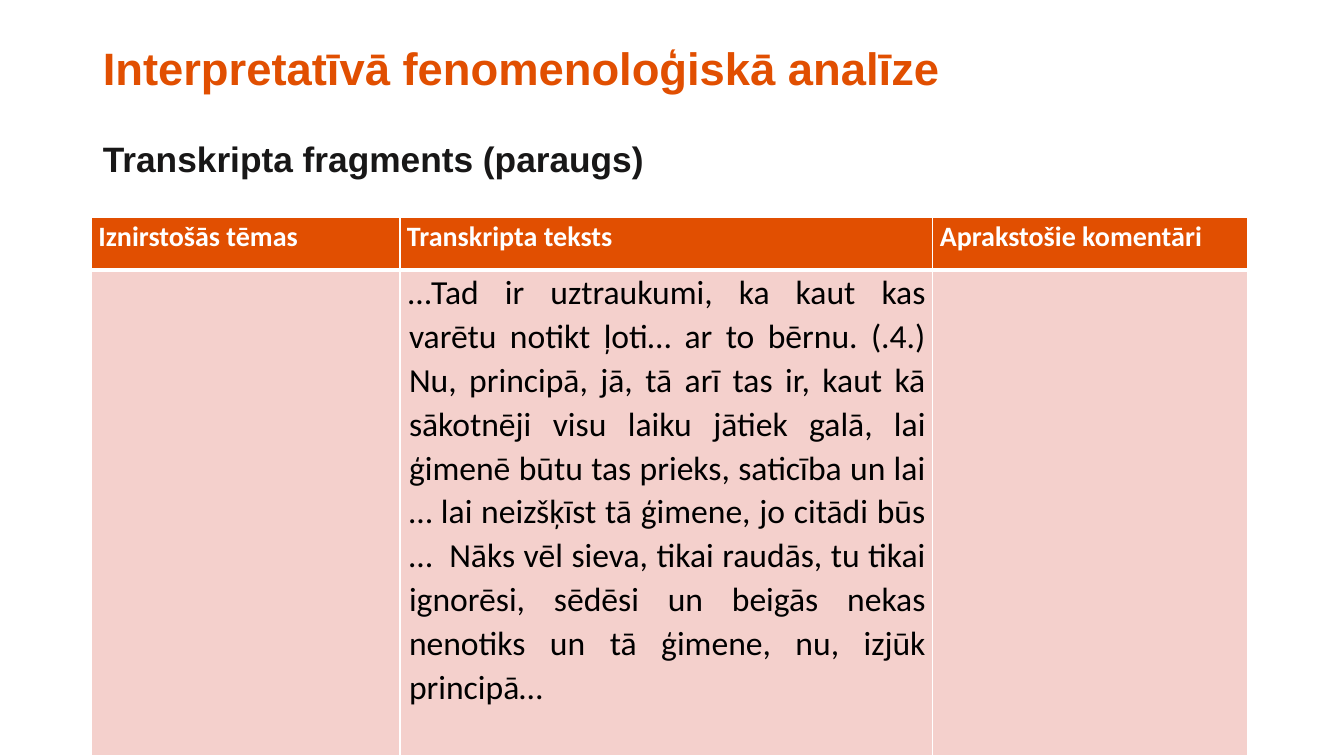
from lxml import etree
from pptx import Presentation, util as u
from pptx.dml.color import RGBColor
from pptx.enum import text
from pptx.oxml import ns

ORANGE = RGBColor(0xE1, 0x4F, 0x01)
PINK = RGBColor(0xF4, 0xD0, 0xCC)
DARK = RGBColor(0x18, 0x17, 0x17)
BLACK = RGBColor(0, 0, 0)
WHITE = RGBColor(0xFF, 0xFF, 0xFF)

WIDTH, HEIGHT = u.Inches(13.33), u.Inches(7.5)
TITLE_BOX = (0.069, 0.053, 0.863, 0.193)  # shares of the slide's size
TABLE_BOX = (0.068, 0.288, 0.86, 0.712)
COLUMN_SHARES = (0.267, 0.461, 0.272)
ROW_SHARES = (0.097, 0.903)

TITLE_LINES = (
    ("Interpretatīvā fenomenoloģiskā analīze", 32.4, ORANGE, 0),
    ("Transkripta fragments (paraugs)", 25.2, DARK, 33.5),
)
HEADERS = ("Iznirstošās tēmas", "Transkripta teksts", "Aprakstošie komentāri")
TRANSCRIPT = (
    "…Tad ir uztraukumi, ka kaut kas varētu notikt ļoti… ar to bērnu. (.4.) "
    "Nu, principā, jā, tā arī tas ir, kaut kā sākotnēji visu laiku jātiek galā, "
    "lai ģimenē būtu tas prieks, saticība un lai … lai neizšķīst tā ģimene, "
    "jo citādi būs …  Nāks vēl sieva, tikai raudās, tu tikai ignorēsi, sēdēsi "
    "un beigās nekas nenotiks un tā ģimene, nu, izjūk principā…"
)


def to_lengths(box):
    """Turn shares of the slide into left, top, width and height."""
    return [int(share * size) for share, size in zip(box, (WIDTH, HEIGHT) * 2)]


def write(paragraph, words, line_spacing, color, **font_format):
    paragraph.line_spacing = line_spacing
    run = paragraph.add_run()
    run.text = words
    for name, value in font_format.items():
        setattr(run.font, name, value)
    run.font.color.rgb = color


def add_title(slide, box):
    title = slide.shapes.title
    for name, value in zip(("left", "top", "width", "height"), box):
        setattr(title, name, value)
    frame = title.text_frame
    frame.word_wrap = True
    frame.auto_size = text.MSO_AUTO_SIZE.NONE
    frame.vertical_anchor = text.MSO_ANCHOR.MIDDLE
    for index, (words, size, color, gap) in enumerate(TITLE_LINES):
        paragraph = frame.add_paragraph() if index else frame.paragraphs[0]
        paragraph.alignment = text.PP_ALIGN.LEFT
        paragraph.space_before = u.Pt(gap)
        write(paragraph, words, 0.9, color, name="Arial", size=u.Pt(size), bold=True)


def format_cell(cell, fill, bottom_width):
    """Set the white borders, the fill and the margins of a cell."""
    properties = cell._tc.get_or_add_tcPr()
    for side, width in (("L", 1), ("R", 1), ("T", 1), ("B", bottom_width)):
        line = etree.SubElement(properties, ns.qn(f"a:ln{side}"), w=str(u.Pt(width)))
        solid = etree.SubElement(line, ns.qn("a:solidFill"))
        etree.SubElement(solid, ns.qn("a:srgbClr"), val=str(WHITE))
    cell.fill.solid()
    cell.fill.fore_color.rgb = fill
    margin = u.Inches(0.07)
    cell.margin_left, cell.margin_right = margin, margin
    cell.margin_top, cell.margin_bottom = 0, 0


def add_transcript_table(slide, box):
    width, height = box[2:]
    table = slide.shapes.add_table(len(ROW_SHARES), len(COLUMN_SHARES), *box).table
    for column, share in zip(table.columns, COLUMN_SHARES):
        column.width = int(width * share)
    for row, share in zip(table.rows, ROW_SHARES):
        row.height = int(height * share)

    for index, header in enumerate(HEADERS):
        header_cell = table.cell(0, index)
        format_cell(header_cell, ORANGE, 3)
        format_cell(table.cell(1, index), PINK, 1)
        write(header_cell.text_frame.paragraphs[0], header, 1.07, WHITE,
              name="Calibri", size=u.Pt(20), bold=True)

    paragraph = table.cell(1, 1).text_frame.paragraphs[0]
    paragraph.alignment = text.PP_ALIGN.JUSTIFY
    indents = paragraph._p.get_or_add_pPr()
    indents.set("marL", str(u.Inches(0.02)))
    indents.set("indent", str(u.Inches(-0.01)))
    write(paragraph, TRANSCRIPT, 1.07, BLACK,
          name="Calibri", size=u.Pt(24), bold=False)


def main():
    presentation = Presentation()
    presentation.slide_width, presentation.slide_height = WIDTH, HEIGHT
    slide = presentation.slides.add_slide(presentation.slide_layouts[5])
    add_title(slide, to_lengths(TITLE_BOX))
    add_transcript_table(slide, to_lengths(TABLE_BOX))
    presentation.save("out.pptx")


if __name__ == "__main__":
    main()
